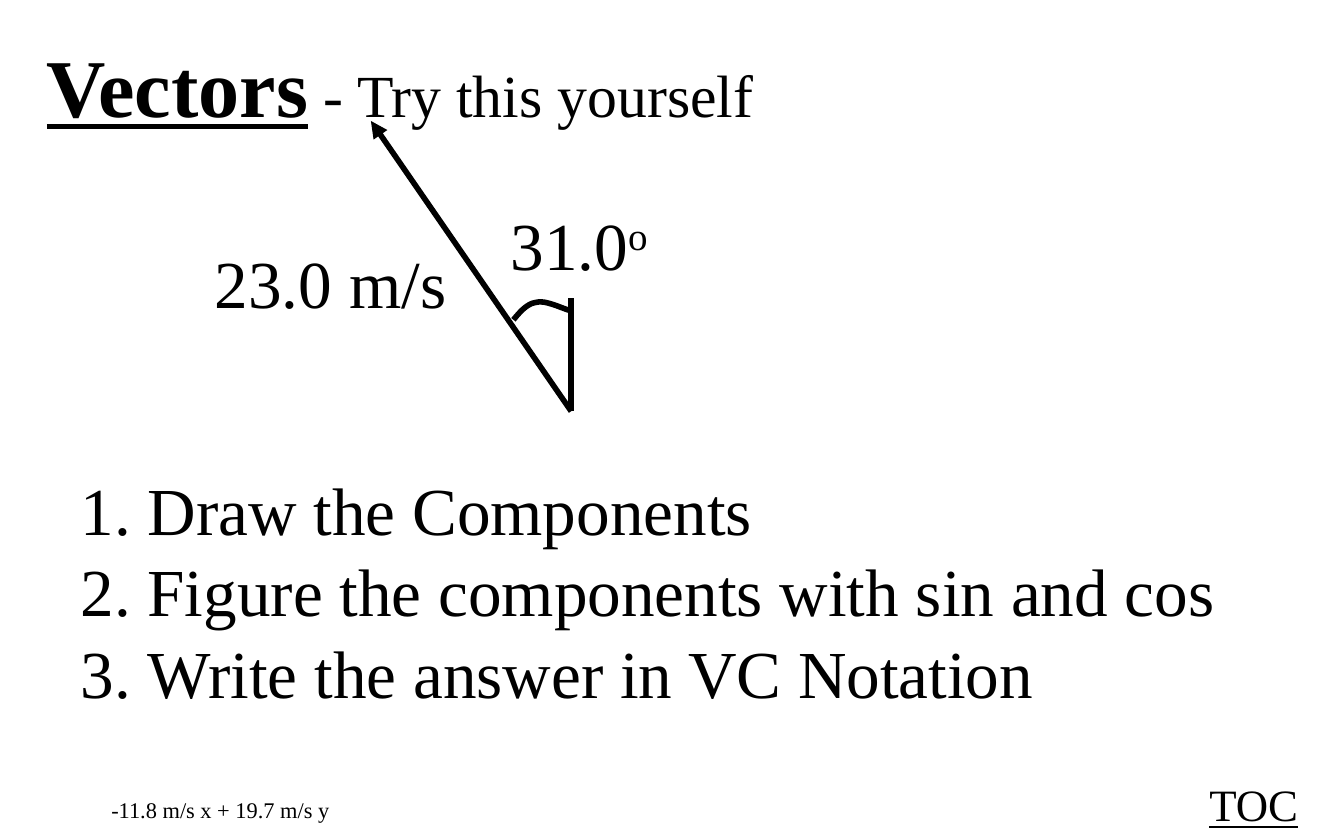
from lxml import etree
from pptx import Presentation, util as u
from pptx.dml.color import RGBColor
from pptx.enum import shapes, text
from pptx.oxml.ns import qn

CELL = 0.25  # inches: the slide is a grid of 40 columns by 25 rows
COLS, ROWS = 40, 25
FACE, INK = "Times New Roman", "000000"
LEAD = 1.21  # line height as a share of the text size


def grid(n):
    return u.Inches(n * CELL)


def paint(color, ink):
    color.rgb = RGBColor.from_string(ink)


def child(node, tag, **attrs):
    return etree.SubElement(node, qn(tag), attrs)


def write(slide, box, lines, listed=False):
    """Fill a box with lines, each a list of (words, size, options) runs."""
    shape = slide.shapes.add_textbox(*map(grid, box))
    frame = shape.text_frame
    frame.word_wrap = False
    frame.auto_size = text.MSO_AUTO_SIZE.SHAPE_TO_FIT_TEXT
    for i, runs in enumerate(lines):
        para = frame.add_paragraph() if i else frame.paragraphs[0]
        para.line_spacing = u.Pt(round(LEAD * max(r[1] for r in runs), 1))
        if listed:
            props = para._p.get_or_add_pPr()
            props.set("marL", str(grid(2)))
            props.set("indent", str(-grid(2)))
            child(props, "a:buFont", typeface=FACE)
            child(props, "a:buAutoNum", type="arabicPeriod")
        for words, size, opts in runs:
            run = para.add_run()
            run.text = words
            font = run.font
            font.name, font.size = FACE, u.Pt(size)
            font.bold = "b" in opts
            font.underline = "u" in opts
            paint(font.color, INK)
            if "sup" in opts:
                run._r.get_or_add_rPr().set("baseline", "30000")


def stroke(line):
    paint(line.color, INK)
    line.width = u.Pt(3)


def ray(slide, start, end, head=False):
    line = slide.shapes.add_connector(
        shapes.MSO_CONNECTOR.STRAIGHT, *map(grid, start + end))
    stroke(line.line)
    if head:
        child(line.line._get_or_add_ln(), "a:tailEnd", type="triangle")
    child(line._element.spPr, "a:effectLst")


def bezier(a, b, c, d, steps=12):
    for i in range(1, steps + 1):
        t = i / steps
        s = 1 - t
        yield tuple(s**3 * p + 3 * s * s * t * q + 3 * s * t * t * r + t**3 * v
                    for p, q, r, v in zip(a, b, c, d))


def arc(slide, start, *curves):
    pen = slide.shapes.build_freeform(*map(grid, start))
    points = []
    for curve in curves:
        points += bezier(points[-1] if points else start, *curve)
    pen.add_line_segments([tuple(map(grid, p)) for p in points], close=False)
    shape = pen.convert_to_shape()
    shape.shadow.inherit = False
    shape.fill.background()
    stroke(shape.line)


def title(slide, box):
    write(slide, box, [[("Vectors", 44, {"b", "u"}),
                        (" - Try this yourself", 32, ())]])


def figure(slide, left, top):
    """Draw the vector, its angle from the vertical, and both labels."""
    def at(x, y):
        return left + x, top + y

    foot = at(11, 8.64)
    ray(slide, at(11, 5.28), foot)
    ray(slide, foot, at(5.04, 0), head=True)
    arc(slide, at(9.28, 5.92),
        (at(9.48, 5.68), at(9.68, 5.44), at(9.96, 5.4)),
        (at(10.24, 5.32), at(10.76, 5.6), at(10.96, 5.64)))
    write(slide, at(0, 3.36) + (7.76, 2.84), [[("23.0 m/s", 36, ())]])
    write(slide, at(8.8, 2.24) + (5, 2.84),
          [[("31.0", 36, ()), ("o", 36, {"sup"})]])


def steps(slide, box):
    tasks = ("Draw the Components",
             "Figure the components with sin and cos",
             "Write the answer in VC Notation")
    write(slide, box, [[(task, 36, ())] for task in tasks], listed=True)


def footer(slide, note, link):
    write(slide, note, [[("-11.8 m/s x + 19.7 m/s y", 12, ())]])
    write(slide, link, [[("TOC", 24, {"u"})]])


def main():
    deck = Presentation()
    deck.slide_width, deck.slide_height = grid(COLS), grid(ROWS)
    slide = deck.slides.add_slide(deck.slide_layouts[6])
    title(slide, (1, 0.84, 22.24, 3.36))
    figure(slide, 6, 3.6)
    steps(slide, (2, 13.72, 34.84, 7.68))
    footer(slide, (2.92, 23.48, 7.44, 1.2), (35.6, 22.92, 3.48, 2))
    deck.save("out.pptx")


if __name__ == "__main__":
    main()
